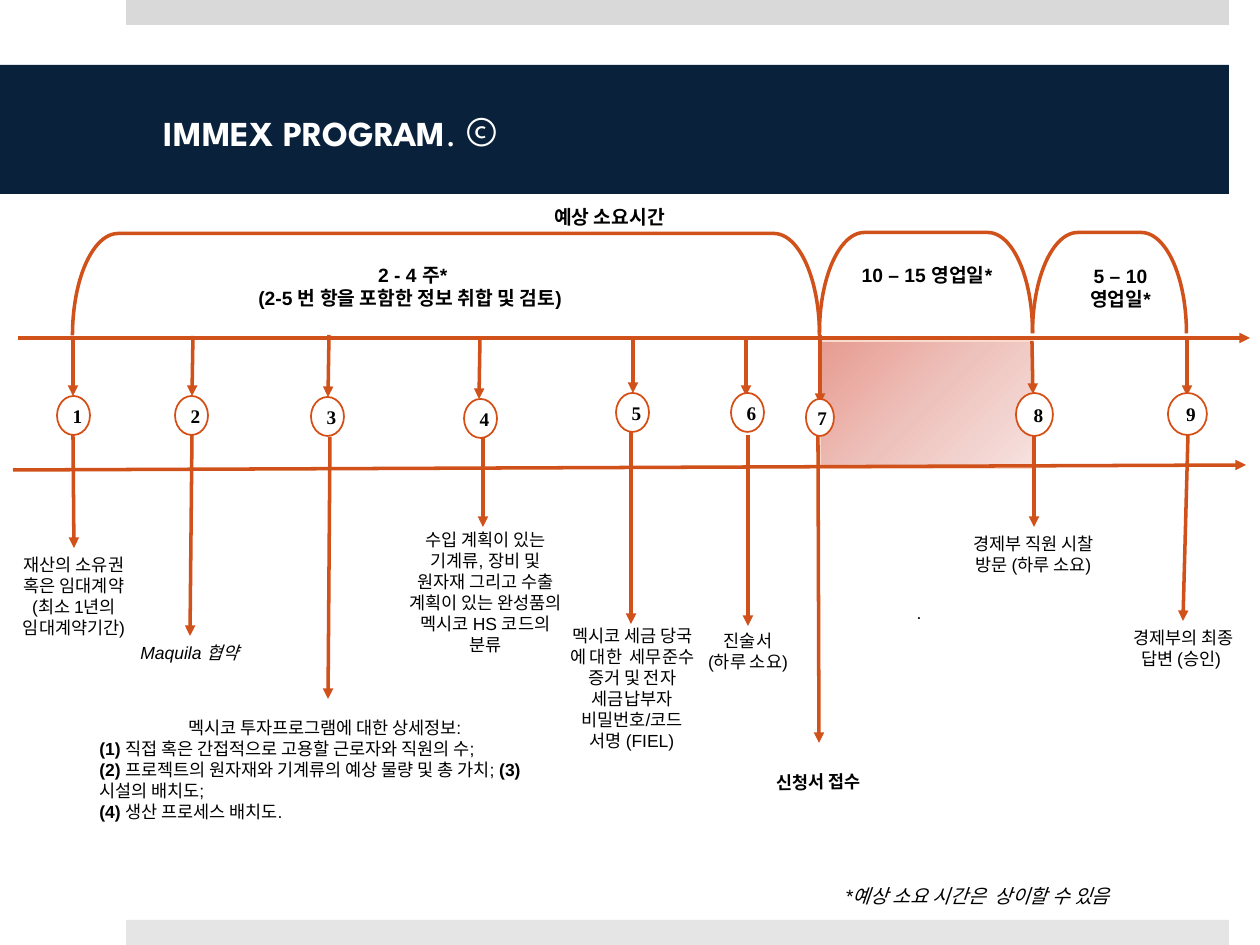
import copy
from dataclasses import dataclass

import pptx
import pptx.util
from pptx.dml.color import RGBColor
from pptx.enum.shapes import MSO_CONNECTOR, MSO_SHAPE
from pptx.enum.text import MSO_ANCHOR, MSO_AUTO_SIZE, PP_ALIGN
from pptx.oxml.ns import qn
from pptx.oxml.xmlchemy import OxmlElement

PX_PER_INCH = 126
Box = tuple[int, int, int, int]   # left, top, width, height
Path = tuple[int, int, int, int]  # start x, start y, end x, end y


@dataclass(frozen=True)
class Theme:
    navy: str = "09213B"
    white: str = "FFFFFF"
    black: str = "000000"
    arrow: str = "D0511A"
    ring: str = "D54F15"
    top_bar: str = "D9D9D9"
    bottom_bar: str = "E5E5E5"
    shade: tuple[str, str, str] = ("E79B90", "EEC2BC", "F6E1DF")
    shade_edge: str = "F9DBCE"
    title_font: str = "League Spartan"
    body_font: str = "Arial"
    number_font: str = "Times New Roman"
    title_size: int = 20
    symbol_size: int = 24
    heading_size: int = 11
    body_size: int = 10
    arrow_width: int = 2
    ring_width: int = 1


@dataclass(frozen=True)
class Label:
    """Text block; segments between | marks are bold."""
    box: Box
    paragraphs: tuple[str, ...]
    size: int = Theme.body_size
    italic: bool = False
    left_from: int = 99  # index of the first left-aligned paragraph
    rotation: float = 0


@dataclass(frozen=True)
class Step:
    ring: Box
    arrow_in: Path
    arrow_out: Path
    label: Label


@dataclass(frozen=True)
class Span:
    left: int
    top: int
    right: int
    bottom: int


THEME = Theme()

STEPS = (
    Step((57, 396, 33, 39), (73, 336, 73, 396), (73, 435, 74, 548),
         Label((-1, 548, 150, 97), ("재산의 소유권 혹은 임대계약 (최소 1년의 임대계약기간)",))),
    Step((175, 396, 33, 39), (193, 336, 192, 396), (192, 435, 190, 636),
         Label((122, 636, 135, 34), ("Maquila 협약",), italic=True)),
    Step((311, 397, 33, 39), (329, 335, 328, 397), (330, 437, 328, 699),
         Label((87, 711, 480, 118), (
             "멕시코 투자프로그램에 대한 상세정보: ",
             "|(1) |직접 혹은 간접적으로 고용할 근로자와 직원의 수;",
             "|(2) |프로젝트의 원자재와 기계류의 예상 물량 및 총 가치; |(3) |시설의 배치도;",
             "|(4) |생산 프로세스 배치도."), left_from=1)),
    Step((464, 399, 33, 39), (480, 338, 479, 399), (483, 438, 483, 527),
         Label((396, 523, 179, 140), (
             "수입 계획이 있는 기계류, 장비 및 원자재 그리고 수출 계획이 있는 완성품의 멕시코 HS 코드의 분류",))),
    Step((616, 393, 33, 39), (633, 339, 633, 393), (631, 432, 631, 624),
         Label((552, 619, 160, 140), (
             "멕시코 세금 당국 에 대한  세무준수 증거 및 전자 세금납부자 비밀번호/코드 서명 (FIEL)",))),
    Step((731, 393, 33, 39), (746, 340, 746, 396), (748, 435, 748, 626),
         Label((668, 624, 160, 55), ("진술서", "(하루 소요)"))),
    Step((806, 399, 28, 37), (820, 335, 820, 404), (818, 436, 819, 743),
         Label((751, 765, 135, 34), ("|신청서 접수|",), rotation=359.2)),
    Step((1016, 393, 37, 43), (1032, 341, 1033, 394), (1034, 436, 1034, 527),
         Label((946, 527, 175, 55), ("경제부 직원 시찰 방문 (하루 소요)",))),
    Step((1168, 393, 39, 42), (1187, 339, 1187, 396), (1188, 435, 1183, 621),
         Label((1110, 621, 147, 55), ("경제부의 최종 답변 (승인) ",))),
)

SPANS = (Span(73, 234, 820, 336), Span(820, 233, 1033, 333), Span(1033, 233, 1187, 334))

NOTES = (
    Label((290, 199, 639, 37), ("|예상 소요시간|",), THEME.heading_size),
    Label((87, 257, 646, 59), ("| 2 - 4 주*|", "|(2-5 번 항을 포함한 정보 취합 및 검토)|"),
          THEME.heading_size),
    Label((833, 257, 188, 37), ("|10 – 15 영업일*|",), THEME.heading_size),
    Label((1060, 258, 121, 59), ("|5 – 10 영업일*|",), THEME.heading_size),
    Label((842, 596, 159, 34), (". ",)),
    Label((833, 878, 387, 37), ("*예상 소요 시간은  상이할 수 있음",), THEME.heading_size,
          italic=True, left_from=0),
)


def px(length: float) -> int:
    return round(length * pptx.util.Inches(1) / PX_PER_INCH)


def rgb(color: str) -> RGBColor:
    return RGBColor.from_string(color)


def set_font(font, name: str, size: int, color: str) -> None:
    font.name, font.size = name, pptx.util.Pt(size)
    font.color.rgb = rgb(color)


def set_line(line, color: str, width: int) -> None:
    line.color.rgb, line.width = rgb(color), pptx.util.Pt(width)


def add_block(slide, kind: MSO_SHAPE, box: Box, fill: str | None = None):
    block = slide.shapes.add_shape(kind, *map(px, box))
    block.shadow.inherit = False
    block.line.fill.background()
    if fill:
        block.fill.solid()
        block.fill.fore_color.rgb = rgb(fill)
    else:
        block.fill.background()
    return block


def add_arrow(slide, route: Path) -> None:
    arrow = slide.shapes.add_connector(MSO_CONNECTOR.STRAIGHT, *map(px, route))
    set_line(arrow.line, THEME.arrow, THEME.arrow_width)
    head = OxmlElement("a:tailEnd")
    head.set("type", "triangle")
    arrow.line._get_or_add_ln().append(head)
    arrow._element.spPr.append(OxmlElement("a:effectLst"))


def add_label(slide, label: Label) -> None:
    textbox = slide.shapes.add_textbox(*map(px, label.box))
    textbox.rotation = label.rotation
    frame = textbox.text_frame
    frame.word_wrap, frame.auto_size = True, MSO_AUTO_SIZE.SHAPE_TO_FIT_TEXT
    for index, text in enumerate(label.paragraphs):
        paragraph = frame.add_paragraph() if index else frame.paragraphs[0]
        paragraph.alignment = PP_ALIGN.LEFT if index >= label.left_from else PP_ALIGN.CENTER
        set_font(paragraph.font, THEME.body_font, label.size, THEME.black)
        paragraph.font.italic = label.italic
        for position, segment in enumerate(text.split("|")):
            if segment:
                run = paragraph.add_run()
                run.text, run.font.bold = segment, position % 2 == 1


def add_span(slide, span: Span) -> None:
    """A left bracket turned a quarter, so it opens downwards."""
    width, height = span.right - span.left, span.bottom - span.top
    left = (span.left + span.right - height) // 2
    top = (span.top + span.bottom - width) // 2
    bracket = add_block(slide, MSO_SHAPE.LEFT_BRACKET, (left, top, height, width))
    bracket.rotation, bracket.adjustments[0] = 90, 0.448
    set_line(bracket.line, THEME.arrow, THEME.arrow_width)


def add_ring(slide, number: int, box: Box) -> None:
    ring = add_block(slide, MSO_SHAPE.OVAL, box, THEME.white)
    set_line(ring.line, THEME.ring, THEME.ring_width)
    ring.text_frame.vertical_anchor = MSO_ANCHOR.MIDDLE
    paragraph = ring.text_frame.paragraphs[0]
    paragraph.alignment = PP_ALIGN.CENTER
    set_font(paragraph.font, THEME.number_font, THEME.heading_size, THEME.black)
    paragraph.font.bold = True
    paragraph.add_run().text = str(number)


def add_shade(slide, box: Box) -> None:
    shade = add_block(slide, MSO_SHAPE.RECTANGLE, box)
    set_line(shade.line, THEME.shade_edge, THEME.ring_width)
    shade.fill.gradient()
    shade.fill.gradient_angle = 315
    stop_list = shade._element.spPr.find(".//" + qn("a:gsLst"))
    stop_list.insert(1, copy.deepcopy(stop_list[0]))
    for index, (stop, color) in enumerate(zip(shade.fill.gradient_stops, THEME.shade)):
        stop.position, stop.color.rgb = index / 2, rgb(color)


def fill_title(title) -> None:
    title.left, title.top, title.width, title.height = map(px, (0, 65, 1229, 129))
    title.fill.solid()
    title.fill.fore_color.rgb = rgb(THEME.navy)
    frame = title.text_frame
    frame.vertical_anchor, frame.auto_size = MSO_ANCHOR.MIDDLE, MSO_AUTO_SIZE.NONE
    frame.margin_left, frame.margin_right = px(164), px(38)
    frame.margin_top = frame.margin_bottom = px(6)
    paragraph = frame.paragraphs[0]
    paragraph.alignment = PP_ALIGN.LEFT
    for text, size, bold in (("IMMEX PROGRAM", THEME.title_size, True),
                             (".", THEME.title_size, False), (" ©", THEME.symbol_size, False)):
        run = paragraph.add_run()
        run.text, run.font.bold = text, bold
        set_font(run.font, THEME.title_font, size, THEME.white)


def main() -> None:
    deck = pptx.Presentation()
    deck.slide_width, deck.slide_height = px(1260), px(945)
    slide = deck.slides.add_slide(deck.slide_layouts[5])

    # Page bars and title band
    add_block(slide, MSO_SHAPE.RECTANGLE, (126, 0, 1103, 25), THEME.top_bar)
    add_block(slide, MSO_SHAPE.RECTANGLE, (126, 920, 1103, 25), THEME.bottom_bar)
    fill_title(slide.shapes.title)

    # Waiting period and the two time axes
    add_shade(slide, (820, 341, 212, 127))
    add_arrow(slide, (13, 470, 1246, 465))
    add_arrow(slide, (18, 338, 1250, 338))

    # Durations above the axis
    for span in SPANS:
        add_span(slide, span)
    for note in NOTES:
        add_label(slide, note)

    # Numbered steps
    for number, step in enumerate(STEPS, start=1):
        add_arrow(slide, step.arrow_in)
        add_arrow(slide, step.arrow_out)
        add_ring(slide, number, step.ring)
        add_label(slide, step.label)

    deck.save("out.pptx")


if __name__ == "__main__":
    main()
